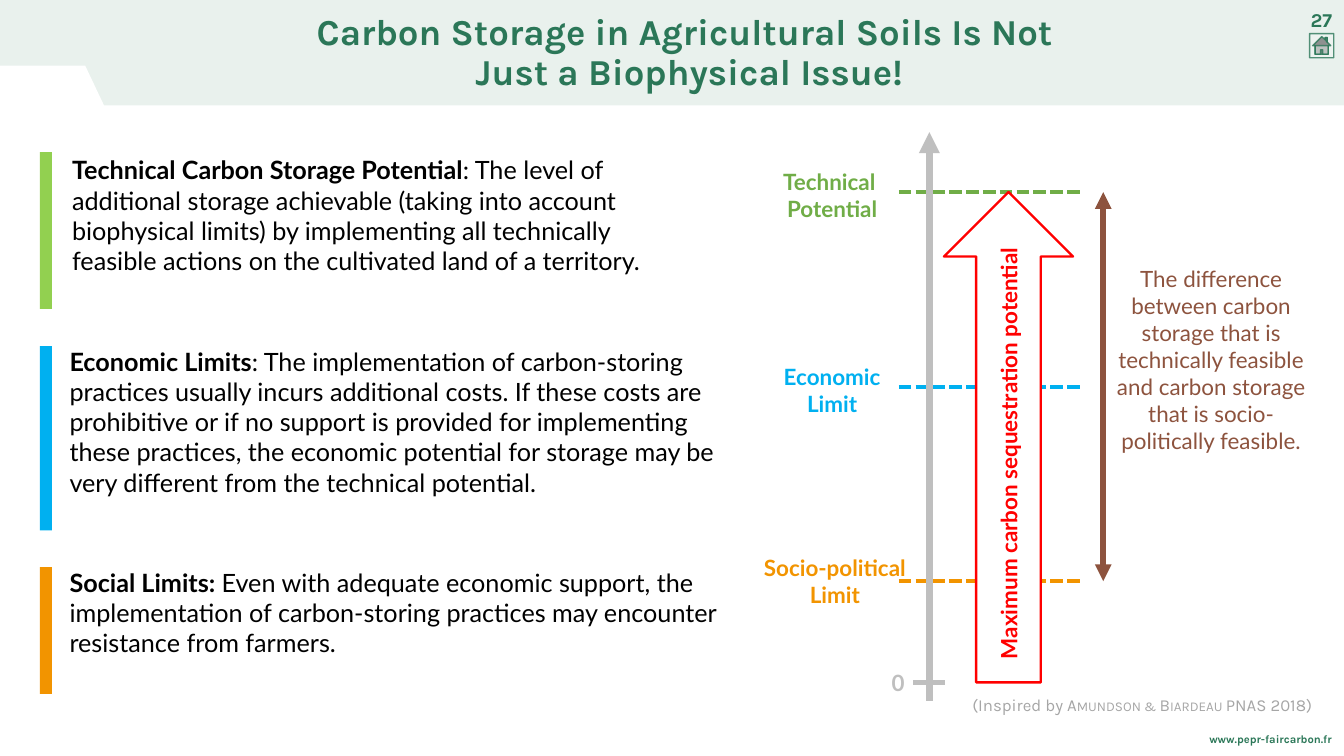
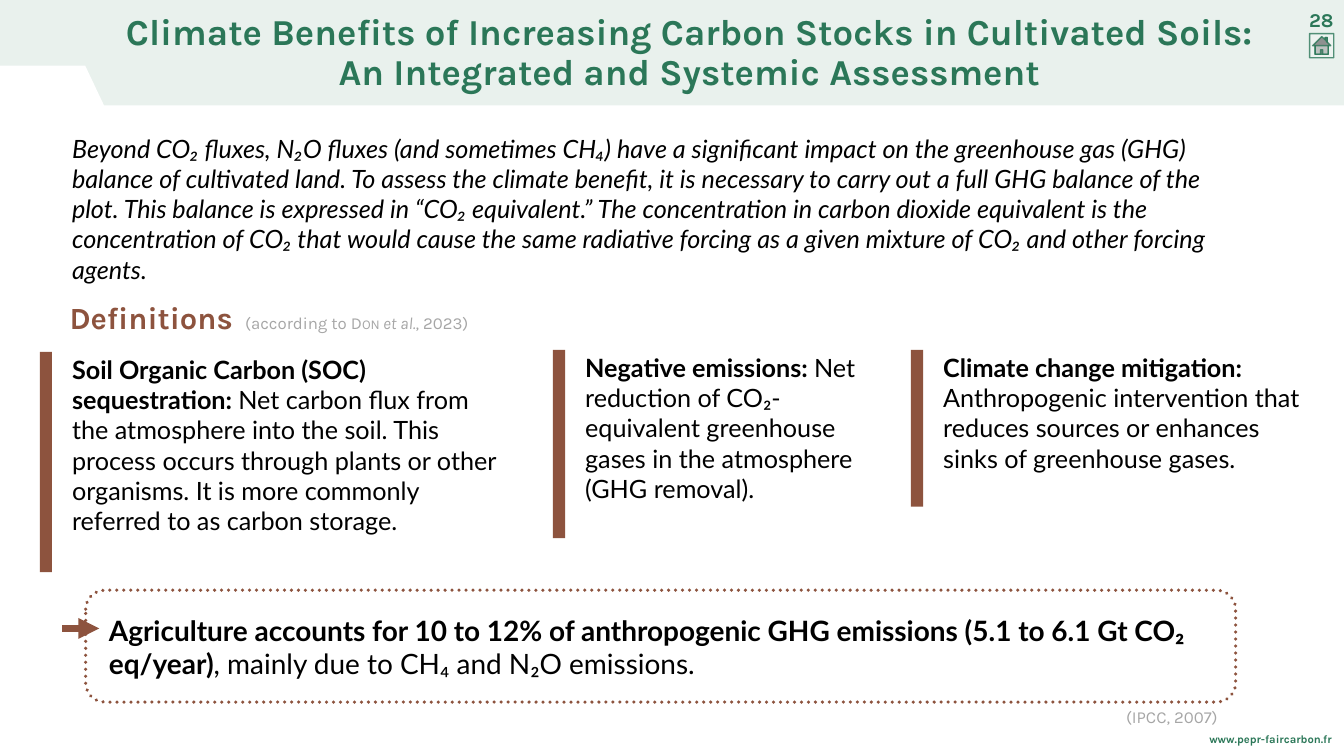
from dataclasses import dataclass, field
from typing import NamedTuple

from lxml import etree
from pptx import Presentation
from pptx.dml.color import RGBColor
from pptx.enum.dml import MSO_LINE
from pptx.enum.shapes import MSO_CONNECTOR, MSO_SHAPE
from pptx.enum.text import MSO_ANCHOR, PP_ALIGN
from pptx.oxml.ns import qn
from pptx.util import Inches, Pt

LEFT, MID, RIGHT = PP_ALIGN.LEFT, PP_ALIGN.CENTER, PP_ALIGN.RIGHT
TOP, CENTRE = MSO_ANCHOR.TOP, MSO_ANCHOR.MIDDLE
RECT, ROUND, ARROW = MSO_SHAPE.RECTANGLE, MSO_SHAPE.ROUNDED_RECTANGLE, MSO_SHAPE.UP_ARROW
DASH, DOT = MSO_LINE.SQUARE_DOT, MSO_LINE.ROUND_DOT
STRAIGHT = MSO_CONNECTOR.STRAIGHT

# The page is a grid of 160 columns by 90 rows of square cells.
COLS, ROWS = 160, 90
CELL = Inches(1) / 6
INSET = 0.3

GREEN, BROWN, RED = "2B7758", "8D533E", "FF0000"
LEAF, LIME, SKY, AMBER = "70AD47", "92D050", "00B0F0", "F29400"
BLACK, WHITE, GREY, SILVER = "000000", "FFFFFF", "A6A6A6", "BFBFBF"

BOLD, PLAIN, SMALL = {"bold": True}, {"bold": False}, {"cap": "small"}


def face(name: str, size: float, color: str = BLACK, **more) -> dict:
    return {"name": name, "size": Pt(size), "color": color, **more}


TITLE = face("Karla", 52.2, GREEN, bold=True)
PAGE = face("Karla", 28, GREEN, bold=True)
SITE = face("Karla", 16, GREEN, bold=True)
CITE = face("Karla", 24, GREY)
BODY = face("Lato", 36)


class Run(NamedTuple):
    text: str
    extra: dict = {}


class Pen(NamedTuple):
    color: str
    width: float
    dash: object = None
    alpha: int = 100


@dataclass
class Note:
    """Text box; each paragraph is a list of runs."""
    left: float
    top: float
    width: float
    height: float
    paras: list
    look: dict = field(default_factory=lambda: BODY)
    align: object = LEFT
    inset: float = INSET
    wrap: bool = True
    turn: float = 0
    lead: float = 0
    tab: float = 0
    anchor: object = TOP


@dataclass
class Card:
    """Coloured bar with a headed text to its right."""
    left: float
    top: float
    tall: float
    width: float
    head: str
    body: str
    color: str = BROWN
    inset: float = INSET


class Level(NamedTuple):
    row: float
    color: str
    left: float
    top: float
    width: float
    lines: tuple


def grid(num: float) -> int:
    return round(num * CELL)


def paint(fmt, color: str, alpha: int = 100) -> None:
    """Set a solid colour on a fill, with its opacity in percent."""
    fmt.solid()
    fmt.fore_color.rgb = RGBColor.from_string(color)
    if alpha < 100:
        node = fmt._xPr.find(".//" + qn("a:srgbClr"))
        etree.SubElement(node, qn("a:alpha"), val=str(alpha * 1000))


def trace(shape, pen: Pen) -> None:
    line = shape.line
    paint(line.fill, pen.color, pen.alpha)
    line.width = Pt(pen.width)
    if pen.dash:
        line.dash_style = pen.dash
    if pen.dash == DOT:
        shape._element.spPr.find(qn("a:ln")).set("cap", "rnd")


def dress(shape, fill: str = "", alpha: int = 100, pen: Pen | None = None) -> None:
    shape.shadow.inherit = False
    if fill:
        paint(shape.fill, fill, alpha)
    else:
        shape.fill.background()
    if pen:
        trace(shape, pen)
    else:
        shape.line.fill.background()


def block(slide, kind, left: float, top: float, width: float, height: float, **look):
    shape = slide.shapes.add_shape(kind, *map(grid, (left, top, width, height)))
    dress(shape, **look)
    return shape


def outline(slide, loops: list, left: float = 0, top: float = 0,
            step: float = 1, **look) -> None:
    """Draw closed loops of points, each point scaled by step cells."""
    paths = [[(grid(left + x * step), grid(top + y * step)) for x, y in loop]
             for loop in loops]
    build = slide.shapes.build_freeform(*paths[0][0], scale=1.0)
    for num, path in enumerate(paths):
        if num:
            build.move_to(*path[0])
        build.add_line_segments(path[1:], close=True)
    dress(build.convert_to_shape(), **look)


def rule(slide, start: tuple, end: tuple, pen: Pen,
         head: bool = False, tail: bool = False) -> None:
    line = slide.shapes.add_connector(STRAIGHT, *map(grid, (*start, *end)))
    trace(line, pen)
    props = line._element.spPr
    for tag, shown in (("a:headEnd", head), ("a:tailEnd", tail)):
        if shown:
            etree.SubElement(props.find(qn("a:ln")), qn(tag), type="triangle")
    etree.SubElement(props, qn("a:effectLst"))


def style(run, look: dict) -> None:
    for key, val in look.items():
        if key == "color":
            paint(run.font.fill, val)
        elif key == "cap":
            run._r.get_or_add_rPr().set("cap", val)
        else:
            setattr(run.font, key, val)


def write(slide, note: Note) -> None:
    box = slide.shapes.add_textbox(
        *map(grid, (note.left, note.top, note.width, note.height)))
    box.rotation = note.turn
    frame = box.text_frame
    pad = grid(note.inset)
    form = {"word_wrap": note.wrap, "vertical_anchor": note.anchor,
            **{f"margin_{side}": pad for side in ("left", "top", "right", "bottom")}}
    for key, val in form.items():
        setattr(frame, key, val)
    for num, runs in enumerate(note.paras):
        para = frame.add_paragraph() if num else frame.paragraphs[0]
        para.alignment = note.align
        if note.lead:
            para.line_spacing = note.lead
        if note.tab:
            tabs = etree.SubElement(para._p.get_or_add_pPr(), qn("a:tabLst"))
            etree.SubElement(tabs, qn("a:tab"), pos=str(grid(note.tab)), algn="l")
        for text, extra in runs:
            run = para.add_run()
            run.text = text
            style(run, {**note.look, **extra})


def lines(*texts: str) -> list:
    return [[Run(text)] for text in texts]


def put(slide, card: Card) -> None:
    block(slide, RECT, card.left, card.top, 1.45, card.tall, fill=card.color)
    write(slide, Note(card.left + 3.54, card.top, card.width, card.tall,
                      [[Run(card.head, BOLD), Run(card.body)]], inset=card.inset))


def house(slide) -> None:
    """Home button, drawn on a fine grid of 48 by 48 steps."""
    frame = [(0, 0), (48, 0), (48, 48), (0, 48)]
    stack = [(35, 17), (35, 8), (31, 8), (31, 12)]
    door = [(22, 32), (26, 32), (26, 41), (22, 41)]
    roof = [(24, 6), (6, 24), (42, 24)]
    wall = [(11, 24), (11, 41), (22, 41), (22, 32), (26, 32), (26, 41), (37, 41), (37, 24)]
    edge = [(24, 6), *stack[::-1], (42, 24), (37, 24), (37, 41), (11, 41), (11, 24), (6, 24)]
    looks = (([frame], {"fill": WHITE, "alpha": 20}),
             ([stack, wall], {"fill": BLACK, "alpha": 20}),
             ([roof, door], {"fill": BLACK, "alpha": 40}),
             ([edge, stack, wall, frame], {"pen": Pen(GREEN, 2, alpha=80)}))
    for loops, look in looks:
        outline(slide, loops, 155.9, 4, 0.06, **look)


def start(deck, page: int, *title: str):
    """Add a slide with the band, home button, footer, number and title."""
    slide = deck.slides.add_slide(deck.slide_layouts[6])
    block(slide, RECT, 0, 0, COLS, 12.54, fill=GREEN, alpha=10)
    house(slide)
    write(slide, Note(143.64, 86.85, 15.2, 3.1, lines("www.pepr-faircarbon.fr"), SITE, RIGHT))
    outline(slide, [[(0, 7.8), (10.14, 7.8), (14.82, 17.7), (0, 17.7)]], fill=WHITE)
    write(slide, Note(154.8, 0.66, 5, 3.4, lines(str(page)), PAGE, MID, wrap=False))
    write(slide, Note(12.5, 1.35, 139.1, 10.7, lines(*title), TITLE, MID,
                      inset=0.36, lead=0.9))
    return slide


def limits(deck) -> None:
    slide = start(deck, 27, "Carbon Storage in Agricultural Soils Is Not ",
                  "Just a Biophysical Issue!")
    for card in (
        Card(4.74, 41.2, 21.96, 79.9, "Economic Limits",
             ": The implementation of carbon-storing practices usually incurs additional "
             "costs. If these costs are prohibitive or if no support is provided for "
             "implementing these practices, the economic potential for storage may be very "
             "different from the technical potential.", SKY, 0),
        Card(4.74, 67.5, 15.12, 78.4, "Social Limits: ",
             "Even with adequate economic support, the implementation of carbon-storing "
             "practices may encounter resistance from farmers.", AMBER, 0),
        Card(4.74, 18.12, 18.66, 74.9, "Technical Carbon Storage Potential",
             ": The level of additional storage achievable (taking into account biophysical "
             "limits) by implementing all technically feasible actions on the cultivated "
             "land of a territory.", LIME),
    ):
        put(slide, card)
    write(slide, Note(111.5, 82.44, 45, 3.1,
                      [[Run("(Inspired by "), Run("Amundson & Biardeau ", SMALL),
                        Run("PNAS 2018)")]], CITE, RIGHT))
    high, base, low = 22.86, 81.24, 69.18
    for level in (
        Level(high, LEAF, 92.28, 19.74, 13.56, ("Technical ", "Potential")),
        Level(46.08, SKY, 92.34, 42.9, 13.44, ("Economic", "Limit")),
        Level(low, AMBER, 89.94, 65.7, 18.9, ("Socio-political", "Limit")),
    ):
        write(slide, Note(level.left, level.top, level.width, 6.96, lines(*level.lines),
                          face("Lato", 32, level.color, bold=True), MID, wrap=False))
        rule(slide, (107, level.row), (129, level.row), Pen(level.color, 6, DASH))
    rule(slide, (108.7, base), (112.5, base), Pen(SILVER, 6))
    write(slide, Note(105.84, 79.32, 2.16, 3.78, lines("0"),
                      face("Lato", 32, SILVER, bold=True), MID, wrap=False))
    rule(slide, (131.34, low), (131.34, high), Pen(BROWN, 8), head=True, tail=True)
    write(slide, Note(132.36, 31.32, 23.64, 22.8,
                      lines("The difference between carbon storage that is technically feasible "
                            "and carbon storage that is socio-politically feasible."),
                      face("Lato", 32, BROWN), MID))
    block(slide, ARROW, 112.38, high, 15.36, base - high, fill=WHITE, pen=Pen(RED, 3.5))
    write(slide, Note(93.24, 52.08, 53.64, 3.78,
                      lines("Maximum carbon sequestration potential"),
                      face("Lato", 32, RED, bold=True), MID, turn=270, anchor=CENTRE))
    rule(slide, (110.64, 83.4), (110.64, 15.72), Pen(SILVER, 10), tail=True)


def benefits(deck) -> None:
    slide = start(deck, 28, "Climate Benefits of Increasing Carbon Stocks in Cultivated Soils: "
                  "An Integrated and Systemic Assessment")
    write(slide, Note(8.28, 15.54, 140.3, 18.5, lines(
        "Beyond CO₂ fluxes, N₂O fluxes (and sometimes CH₄) have a significant impact on the "
        "greenhouse gas (GHG) balance of cultivated land. To assess the climate benefit, it is "
        "necessary to carry out a full GHG balance of the plot. This balance is expressed in "
        "“CO₂ equivalent.” The concentration in carbon dioxide equivalent is the concentration "
        "of CO₂ that would cause the same radiative forcing as a given mixture of CO₂ and other "
        "forcing agents."), {**BODY, "italic": True}))
    for card in (
        Card(4.74, 41.88, 26.22, 51.6, "Soil Organic Carbon (SOC) sequestration: ",
             "Net carbon flux from the atmosphere into the soil. This process occurs through "
             "plants or other organisms. It is more commonly referred to as carbon storage."),
        Card(65.82, 41.64, 22.44, 32.8, "Negative emissions: ",
             "Net reduction of CO₂-equivalent greenhouse gases in the atmosphere (GHG removal)."),
        Card(108.45, 41.64, 18.66, 43.8, "Climate change mitigation: ",
             "Anthropogenic intervention that reduces sources or enhances sinks of "
             "greenhouse gases."),
    ):
        put(slide, card)
    write(slide, Note(8.28, 35.58, 50.3, 4.44,
                      [[Run("Definitions", face("Karla", 44, BROWN, bold=True)),
                        Run("\t(according to "), Run("Don ", SMALL),
                        Run("et al.", {"italic": True}), Run(", 2023)")]],
                      CITE, inset=0, tab=20.9))
    frame = block(slide, ROUND, 10.2, 70.26, 136.9, 13.32, pen=Pen(BROWN, 5, DOT))
    frame.adjustments[0] = 0.17
    write(slide, Note(11.1, 71.16, 136.9, 11.76,
                      [[Run("Agriculture accounts for 10 to 12% of anthropogenic GHG emissions "
                            "(5.1 to 6.1 Gt CO₂ eq/year)", BOLD),
                        Run(", mainly due to CH₄ and N₂O emissions.", PLAIN)]],
                      face("Lato", 40), inset=1.86))
    rule(slide, (11.82, 74.82), (7.38, 74.82), Pen(BROWN, 10), head=True)
    write(slide, Note(112.86, 83.88, 32.4, 3.1, lines("(IPCC, 2007)"), CITE, RIGHT))


def main() -> None:
    deck = Presentation()
    deck.slide_width, deck.slide_height = grid(COLS), grid(ROWS)
    limits(deck)
    benefits(deck)
    deck.save("out.pptx")


if __name__ == "__main__":
    main()
